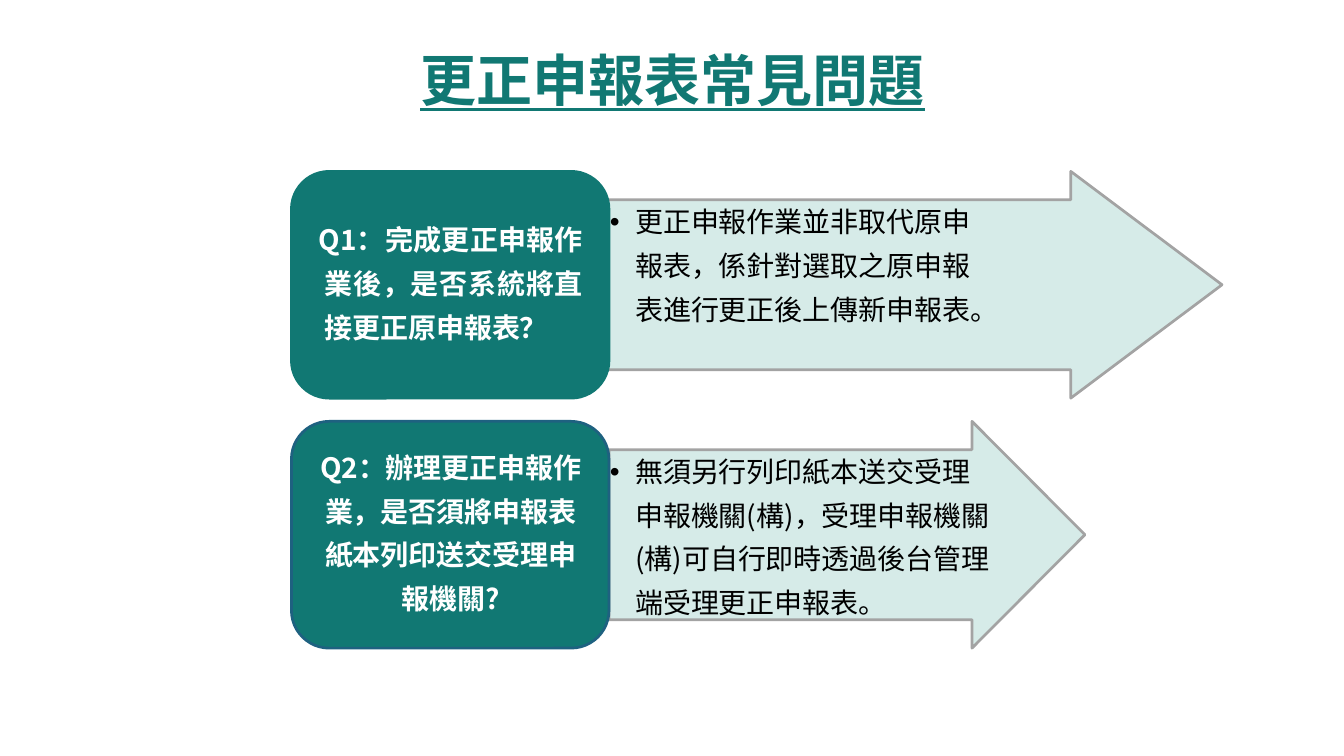
"""Build a slide that pairs two questions on corrected reports with their answers."""
from lxml.etree import SubElement
from pptx import Presentation
from pptx.dml.color import RGBColor
from pptx.enum.shapes import MSO_SHAPE as SHAPE
from pptx.enum.text import MSO_ANCHOR, MSO_AUTO_SIZE, PP_ALIGN
from pptx.oxml.ns import qn
from pptx.util import Inches, Pt

TEAL = RGBColor(0x11, 0x78, 0x73)
MINT = RGBColor(0xD2, 0xE9, 0xE6)
GRAY = RGBColor(0xA3, 0xA3, 0xA3)
BLUE = RGBColor(0x1E, 0x61, 0x80)
BLACK = RGBColor(0, 0, 0)
WHITE = RGBColor(0xFF, 0xFF, 0xFF)
FONT = "Noto Sans CJK TC"

BOX_LEFT, BOX_W = 2.89, 3.15
BOX_RIGHT = BOX_LEFT + BOX_W
ROW_TOP, ROW_H, ROW_PITCH = 1.7, 2.25, 2.48

TITLE = dict(size=Pt(40), bold=True, underline=True, name=FONT)
QUESTION = dict(size=Pt(20), bold=True, name=FONT)
ANSWER = dict(size=Pt(20), bold=False, name=FONT)


def write(sp, box, text, fmt, color, align, margin=0, indent=0, spacing=1.3, spc=-10):
    """Place a text holder and fill it with one formatted paragraph."""
    sp.left, sp.top, sp.width, sp.height = map(Inches, box)
    tf = sp.text_frame
    frame = dict(margin_left=0, margin_right=0, margin_top=Inches(0.01), margin_bottom=0,
                 word_wrap=True, auto_size=MSO_AUTO_SIZE.NONE, vertical_anchor=MSO_ANCHOR.TOP)
    for key, value in frame.items():
        setattr(tf, key, value)
    p = tf.paragraphs[0]
    p.alignment, p.line_spacing, p.space_before = align, spacing, Pt(0)
    pPr = p._p.get_or_add_pPr()
    pPr.set("marL", str(Inches(margin)))
    pPr.set("indent", str(Inches(indent)))
    r = p.add_run()
    r.text = text
    for key, value in fmt.items():
        setattr(r.font, key, value)
    r.font.color.rgb = color
    rPr = r._r.get_or_add_rPr()
    rPr.set("spc", str(spc))
    SubElement(rPr, qn("a:ea")).set("typeface", FONT)


def block(kind, left, top, width, fill, line, adjustments):
    """Draw a filled and outlined preset shape of one row's height."""
    sp = s.shapes.add_shape(kind, Inches(left), Inches(top), Inches(width), Inches(ROW_H))
    sp.shadow.inherit = False
    sp.fill.solid()
    sp.fill.fore_color.rgb = fill
    sp.line.color.rgb = line
    sp.line.width = Pt(1.92)
    for i, value in enumerate(adjustments):
        sp.adjustments[i] = value
    return sp


prs = Presentation()
prs.slide_width, prs.slide_height = Inches(13.33), Inches(7.5)
s = prs.slides.add_slide(prs.slide_layouts[3])

write(s.shapes.title, (4.15, 0.44, 5.04, 0.7), "更正申報表常見問題", TITLE, TEAL,
      PP_ALIGN.CENTER, spacing=1.0, spc=10)
s.shapes.title.text_frame.word_wrap = False

rows = [
    dict(question="Q1：完成更正申報作 業後，是否系統將直 接更正原申報表？",
         answer="更正申報作業並非取代原申 報表，係針對選取之原申報 表進行更正後上傳新申報表。",
         q_top=0.4, q_align=PP_ALIGN.JUSTIFY, q_margin=0.07, q_indent=-0.06, text_h=1.33,
         a_w=3.89, arrow=(5.83, 12.12), head=1.5, outline=TEAL),
    dict(question="Q2：辦理更正申報作 業，是否須將申報表 紙本列印送交受理申 報機關?",
         answer="無須另行列印紙本送交受理 申報機關(構)，受理申報機關 (構)可自行即時透過後台管理 端受理更正申報表。",
         q_top=0.18, q_align=PP_ALIGN.CENTER, q_margin=0.01, q_indent=0, text_h=1.76,
         a_w=3.78, arrow=(BOX_RIGHT, 10.76), head=1.12, outline=BLUE),
]

for i, row in enumerate(rows):
    top = ROW_TOP + i * ROW_PITCH
    start, tip = row["arrow"]
    arrow = block(SHAPE.RIGHT_ARROW, start, top, tip - start, MINT, GRAY,
                  (0.75, row["head"] / ROW_H))
    mint = arrow._element.spPr.find(qn("a:solidFill"))[0]
    SubElement(mint, qn("a:alpha")).set("val", "90000")

    answer = s.placeholders[i + 1]
    s.shapes._spTree.append(answer._element)
    write(answer, (BOX_RIGHT, top + 0.22, row["a_w"], row["text_h"]), row["answer"],
          ANSWER, BLACK, PP_ALIGN.LEFT, margin=0.26, indent=-0.25)

    block(SHAPE.ROUNDED_RECTANGLE, BOX_LEFT, top, BOX_W, TEAL, row["outline"], (1 / 6,))
    question = s.shapes.add_textbox(0, 0, 0, 0)
    write(question, (3.15, top + row["q_top"], 2.63, row["text_h"]), row["question"],
          QUESTION, WHITE, row["q_align"], margin=row["q_margin"], indent=row["q_indent"])

prs.save("out.pptx")
